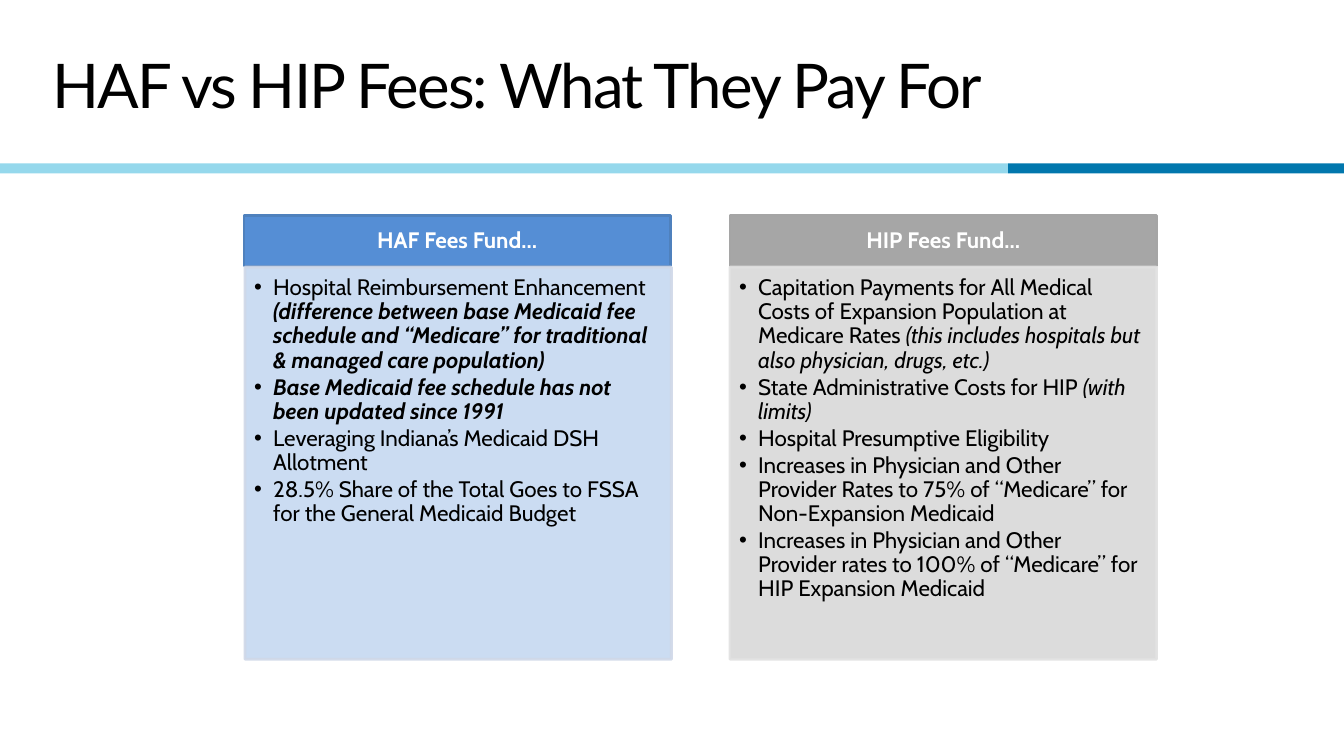
from lxml import etree
from pptx import Presentation
from pptx.dml.color import RGBColor
from pptx.enum.shapes import MSO_SHAPE
from pptx.enum.text import MSO_ANCHOR, PP_ALIGN
from pptx.oxml.ns import qn
from pptx.util import Inches, Pt

RECT = MSO_SHAPE.RECTANGLE
MIDDLE, TOP = MSO_ANCHOR.MIDDLE, MSO_ANCHOR.TOP
LEFT, CENTER = PP_ALIGN.LEFT, PP_ALIGN.CENTER

BLACK = RGBColor(0x00, 0x00, 0x00)
WHITE = RGBColor(0xFF, 0xFF, 0xFF)
BAND_LIGHT = RGBColor(0x95, 0xD8, 0xEC)
BAND_DARK = RGBColor(0x01, 0x77, 0xAD)
HAF_HEAD = RGBColor(0x55, 0x8E, 0xD5)
HAF_HEAD_LINE = RGBColor(0x4F, 0x81, 0xBD)
HAF_BODY = RGBColor(0xC6, 0xD9, 0xF1)
HAF_BODY_LINE = RGBColor(0xD0, 0xD8, 0xE8)
HIP_HEAD = RGBColor(0xA6, 0xA6, 0xA6)
HIP_HEAD_LINE = RGBColor(0xA5, 0xA5, 0xA5)
HIP_BODY = RGBColor(0xD9, 0xD9, 0xD9)
HIP_BODY_LINE = RGBColor(0xE1, 0xE1, 0xE1)

HEAD_INSETS = (0.12, 0.07, 0.12, 0.07)
BODY_INSETS = (0.09, 0.09, 0.12, 0.14)

HAF_ITEMS = [
    [("Hospital Reimbursement Enhancement ", ""),
     ("(difference between base Medicaid fee schedule and “Medicare” "
      "for traditional & managed care population)", "bi")],
    [("Base Medicaid fee schedule has not been updated since 1991", "bi")],
    [("Leveraging Indiana’s Medicaid DSH Allotment", "")],
    [("28.5% Share of the Total Goes to FSSA for the General Medicaid Budget", "")],
]
HIP_ITEMS = [
    [("Capitation Payments for All Medical Costs of Expansion Population "
      "at Medicare Rates ", ""),
     ("(this includes hospitals but also physician, drugs, etc.)", "i")],
    [("State Administrative Costs for HIP ", ""), ("(with limits)", "i")],
    [("Hospital Presumptive Eligibility", "")],
    [("Increases in Physician and Other Provider Rates to 75% of “Medicare” "
      "for Non-Expansion Medicaid", "")],
    [("Increases in Physician and Other Provider rates to 100% of “Medicare” "
      "for HIP Expansion Medicaid", "")],
]


def set_alpha(sp, percent):
    for color in sp._element.spPr.iter(qn("a:srgbClr")):
        etree.SubElement(color, qn("a:alpha"), val=str(percent * 1000))


def add_bullet(p):
    pPr = p._p.get_or_add_pPr()
    pPr.set("marL", str(Inches(0.19)))
    pPr.set("indent", str(-Inches(0.19)))
    etree.SubElement(pPr, qn("a:buFont"), typeface="Arial")
    etree.SubElement(pPr, qn("a:buChar"), char="•")


def add_rect(s, left, top, width, height, fill, line=None, alpha=None):
    sp = s.shapes.add_shape(RECT, Inches(left), Inches(top), Inches(width), Inches(height))
    sp.shadow.inherit = False
    sp.fill.solid()
    sp.fill.fore_color.rgb = fill
    if line is None:
        sp.line.fill.background()
    else:
        sp.line.color.rgb = line
        sp.line.width = Pt(2)
    if alpha is not None:
        set_alpha(sp, alpha)
    return sp


def write_text(sp, paragraphs, font="Cabin", size=16, color=BLACK, align=LEFT, anchor=TOP,
               insets=(0.1, 0.05, 0.1, 0.05), line_spacing=1.0, space_after=0,
               bullets=False, tracking=None):
    tf = sp.text_frame
    tf.word_wrap = True
    tf.vertical_anchor = anchor
    tf.margin_left, tf.margin_top, tf.margin_right, tf.margin_bottom = map(Inches, insets)
    for i, runs in enumerate(paragraphs):
        p = tf.paragraphs[0] if i == 0 else tf.add_paragraph()
        p.alignment = align
        p.line_spacing = line_spacing
        p.space_after = Pt(space_after)
        if bullets:
            p.level = 1
            add_bullet(p)
        for text, style in runs:
            r = p.add_run()
            r.text = text
            r.font.name = font
            r.font.size = Pt(size)
            r.font.color.rgb = color
            r.font.bold = "b" in style
            r.font.italic = "i" in style
            if tracking is not None:
                r.font._element.set("spc", str(round(tracking * 100)))


def add_title(s, text):
    box = s.shapes.add_textbox(Inches(0.42), Inches(0.23), Inches(10.89), Inches(1.21))
    write_text(box, [[(text, "")]], font="Lato", size=44, anchor=MIDDLE, tracking=-1.4)


def add_fee_column(s, head_left, body_left, heading, items, head_colors, body_colors):
    head = add_rect(s, head_left, 2.14, 4.23, 0.5, *head_colors)
    write_text(head, [[(heading, "b")]], color=WHITE, align=CENTER, anchor=MIDDLE,
               insets=HEAD_INSETS, line_spacing=0.9)
    body = add_rect(s, body_left, 2.65, 4.23, 3.89, *body_colors, alpha=90)
    write_text(body, items, insets=BODY_INSETS, line_spacing=0.9, space_after=2, bullets=True)


def main():
    prs = Presentation()
    prs.slide_width, prs.slide_height = Inches(13.33), Inches(7.5)
    s = prs.slides.add_slide(prs.slide_layouts[6])
    add_rect(s, 0, 1.62, 10, 0.1, BAND_LIGHT)
    add_rect(s, 10, 1.62, 3.33, 0.1, BAND_DARK)
    add_title(s, "HAF vs HIP Fees: What They Pay For")
    add_fee_column(s, 2.42, 2.43, "HAF Fees Fund…", HAF_ITEMS,
                   (HAF_HEAD, HAF_HEAD_LINE), (HAF_BODY, HAF_BODY_LINE))
    add_fee_column(s, 7.24, 7.24, "HIP Fees Fund…", HIP_ITEMS,
                   (HIP_HEAD, HIP_HEAD_LINE), (HIP_BODY, HIP_BODY_LINE))
    prs.save("out.pptx")


if __name__ == "__main__":
    main()
